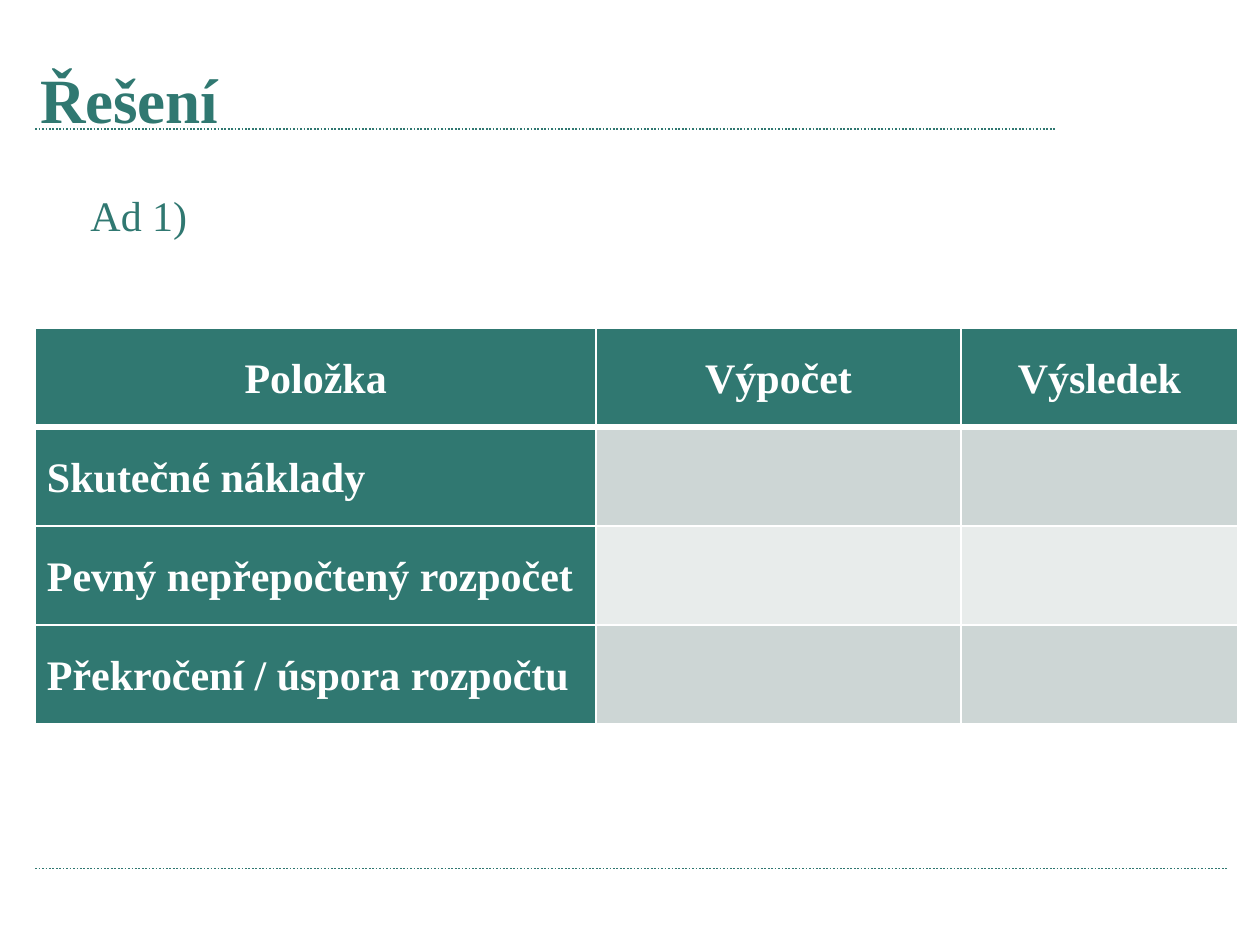
from lxml.etree import SubElement
from pptx import Presentation
from pptx.dml.color import RGBColor
from pptx.enum.dml import MSO_LINE_DASH_STYLE as Dash
from pptx.enum.shapes import MSO_CONNECTOR as Connector
from pptx.enum.text import MSO_ANCHOR as Anchor, PP_ALIGN as Align
from pptx.oxml.ns import qn
from pptx.util import Inches, Pt

COLORS = {"teal": "307871", "white": "FFFFFF", "band": "CDD6D5", "light": "E8ECEB"}
FONT = "Times New Roman"
SLIDE_WIDTH = 7.5
SLIDE_HEIGHT = SLIDE_WIDTH * 3 / 4
HEADERS = ["Položka", "Výpočet", "Výsledek"]
ITEMS = ["Skutečné náklady", "Pevný nepřepočtený rozpočet", "Překročení / úspora rozpočtu"]
COLUMN_WIDTHS = [3.34, 2.17, 1.65]


def color(name):
    return RGBColor.from_string(COLORS[name])


def write_text(frame, text, size=18, ink="teal", bold=False, align=Align.LEFT, spacing=None):
    paragraph = frame.paragraphs[0]
    paragraph.alignment = align
    paragraph.line_spacing = spacing
    run = paragraph.add_run()
    run.text = text
    run.font.name = FONT
    run.font.size = Pt(size)
    run.font.bold = bold
    run.font.color.rgb = color(ink)


def add_text(slide, box, text, anchor=Anchor.TOP, **text_format):
    shape = slide.shapes.add_textbox(*map(Inches, box))
    shape.text_frame.word_wrap = True
    shape.text_frame.vertical_anchor = anchor
    write_text(shape.text_frame, text, **text_format)


def add_rule(slide, left, top, width):
    points = map(Inches, (left, top, left + width, top))
    rule = slide.shapes.add_connector(Connector.STRAIGHT, *points)
    rule.line.color.rgb = color("teal")
    rule.line.width = Pt(0.75)
    rule.line.dash_style = Dash.ROUND_DOT  # written as sysDot
    SubElement(rule._element.spPr, qn("a:effectLst"))


def set_borders(cell, top=1, bottom=1):
    properties = cell._tc.get_or_add_tcPr()
    widths = {"a:lnL": 1, "a:lnR": 1, "a:lnT": top, "a:lnB": bottom}
    for index, (tag, width) in enumerate(widths.items()):
        border = SubElement(properties, qn(tag), w=str(Pt(width)))
        fill = SubElement(border, qn("a:solidFill"))
        SubElement(fill, qn("a:srgbClr"), val=COLORS["white"])
        properties.insert(index, border)  # borders precede the cell fill


def add_budget_table(slide, left, top, row_height):
    rows = [HEADERS] + [[item, "", ""] for item in ITEMS]
    width, height = sum(COLUMN_WIDTHS), row_height * len(rows)
    box = map(Inches, (left, top, width, height))
    table = slide.shapes.add_table(len(rows), len(HEADERS), *box).table
    for column, column_width in zip(table.columns, COLUMN_WIDTHS):
        column.width = Inches(column_width)
    for row_index, row in enumerate(rows):
        for column_index, text in enumerate(row):
            cell = table.cell(row_index, column_index)
            is_header = row_index == 0
            is_heading = is_header or column_index == 0
            band = "band" if row_index % 2 else "light"
            cell.fill.solid()
            cell.fill.fore_color.rgb = color("teal" if is_heading else band)
            cell.vertical_anchor = Anchor.MIDDLE
            cell.margin_left = cell.margin_right = Inches(0.07)
            cell.margin_top = cell.margin_bottom = 0
            set_borders(cell, top=3 if row_index == 1 else 1, bottom=3 if is_header else 1)
            if text:
                write_text(cell.text_frame, text, ink="white", bold=True, spacing=1.07,
                           align=Align.CENTER if is_header else Align.LEFT)


def add_header(slide, left, top):
    add_rule(slide, left + 0.07, top + 0.48, 6.08)
    add_text(slide, (left, top, 6.61, 0.59), "Řešení", anchor=Anchor.MIDDLE, size=27, bold=True)


def main():
    presentation = Presentation()
    presentation.slide_width = Inches(SLIDE_WIDTH)
    presentation.slide_height = Inches(SLIDE_HEIGHT)
    slide = presentation.slides.add_slide(presentation.slide_layouts[6])
    # Title and its rule
    add_header(slide, 0.14, 0.29)
    # Task label
    add_text(slide, (0.44, 1.08, 1.42, 0.4), "Ad 1)")
    # Budget table
    add_budget_table(slide, 0.21, 1.95, 0.59)
    # Footer rule
    add_rule(slide, 0.21, 5.17, 7.1)
    presentation.save("out.pptx")


if __name__ == "__main__":
    main()
